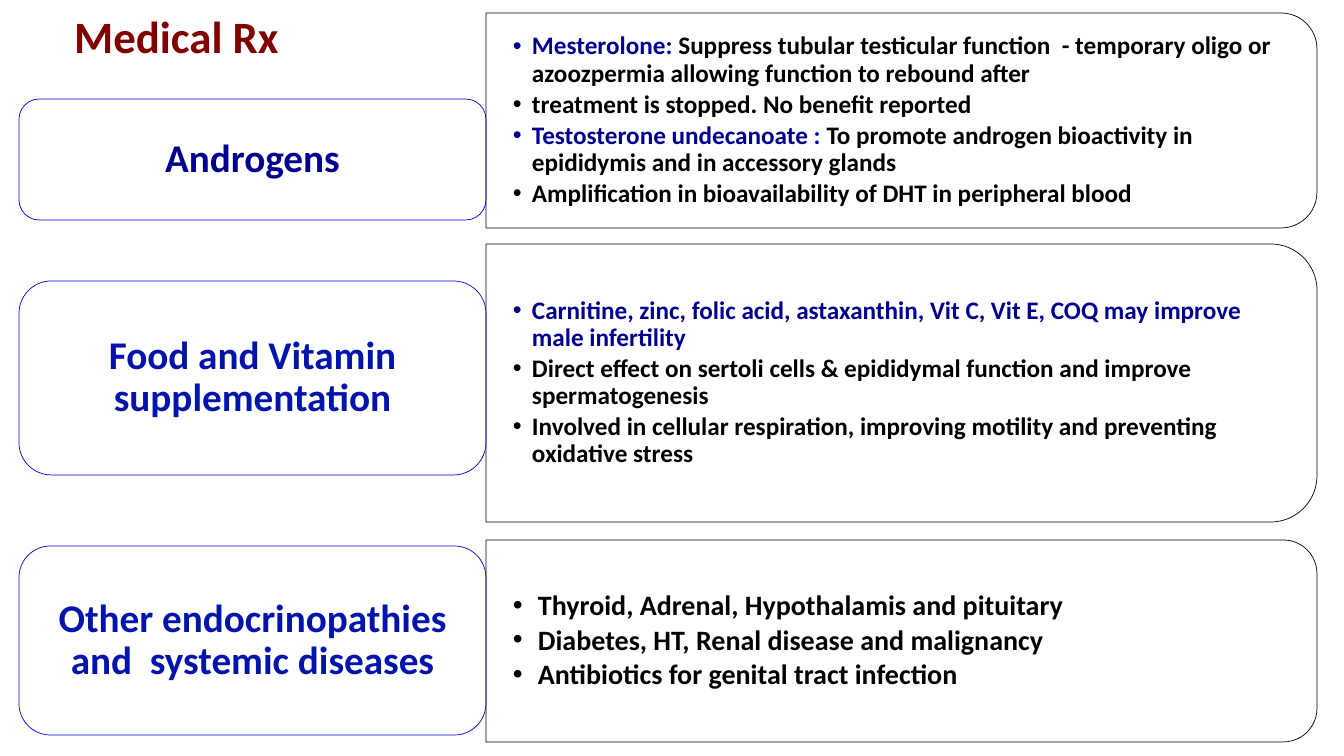
from lxml.etree import SubElement
from pptx import Presentation
from pptx.dml.color import RGBColor
from pptx.enum.shapes import MSO_SHAPE as Shape
from pptx.enum.text import MSO_ANCHOR as Anchor, PP_ALIGN as Align
from pptx.oxml.ns import qn
from pptx.util import Pt

EMU_PER_PX = 914400 / 100.8
NAVY, BLUE, BLACK, MAROON, OUTLINE = "000090", "0113AD", "000000", "800000", "0B00D4"
LABEL_LEFT, LABEL_WIDTH = 19, 467
PANEL_LEFT, PANEL_WIDTH = LABEL_LEFT + LABEL_WIDTH, 831

# label, colour, (top, height) of label, (top, height) of panel, size, indent, bullets
ROWS = [
    ("Androgens", NAVY, (99, 121), (13, 215), 18, 19, [
        [("Mesterolone: ", NAVY),
         ("Suppress tubular testicular function  - temporary oligo or azoozpermia "
          "allowing function to rebound after", BLACK)],
        [("treatment is stopped. No benefit reported", BLACK)],
        [("Testosterone undecanoate : ", NAVY),
         ("To promote androgen bioactivity in epididymis and in accessory glands", BLACK)],
        [("Amplification in bioavailability of DHT in peripheral blood", BLACK)],
    ]),
    ("Food and Vitamin supplementation", BLUE, (281, 194), (244, 278), 18, 19, [
        [("Carnitine, zinc, folic acid, astaxanthin, Vit C, Vit E, COQ may improve "
          "male infertility", NAVY)],
        [("Direct effect on sertoli cells & epididymal function and improve "
          "spermatogenesis", BLACK)],
        [("Involved in cellular respiration, improving motility and preventing "
          "oxidative stress", BLACK)],
    ]),
    ("Other endocrinopathies and  systemic diseases", BLUE, (546, 189), (540, 202), 20, 25, [
        [("Thyroid, Adrenal, Hypothalamis and pituitary", BLACK)],
        [("Diabetes, HT, Renal disease and malignancy", BLACK)],
        [("Antibiotics for genital tract infection", BLACK)],
    ]),
]


def px(length):
    return round(length * EMU_PER_PX)


def rgb(color):
    return RGBColor.from_string(color)


class SlideBuilder:
    font_name = "Calibri"

    def __init__(self, presentation):
        self.slide = presentation.slides.add_slide(presentation.slide_layouts[5])

    def style(self, font, size, color=None):
        font.name, font.size, font.bold = self.font_name, Pt(size), True
        if color:
            font.color.rgb = rgb(color)

    def frame(self, shape, anchor, horizontal, vertical):
        """Set wrapping, anchor and insets, and return the text frame."""
        frame = shape.text_frame
        frame.word_wrap, frame.vertical_anchor = True, anchor
        frame.margin_left = frame.margin_right = px(horizontal)
        frame.margin_top = frame.margin_bottom = px(vertical)
        return frame

    def title(self, text, left, top, width, height, size, color):
        title = self.slide.shapes.title
        title.left, title.top, title.width, title.height = map(px, (left, top, width, height))
        frame = self.frame(title, Anchor.TOP, 10, 5)
        frame.text = text
        paragraph = frame.paragraphs[0]
        paragraph.alignment = Align.CENTER
        self.style(paragraph.font, size, color)

    def outline(self, kind, left, top, width, height, color):
        shape = self.slide.shapes.add_shape(kind, *map(px, (left, top, width, height)))
        shape.shadow.inherit = False
        shape.fill.background()
        shape.line.color.rgb = rgb(color)
        shape.line.width = Pt(0.5)
        return shape

    def label(self, text, top, height, color):
        shape = self.outline(Shape.ROUNDED_RECTANGLE, LABEL_LEFT, top, LABEL_WIDTH, height, OUTLINE)
        frame = self.frame(shape, Anchor.MIDDLE, 12, 6)
        frame.text = text
        paragraph = frame.paragraphs[0]
        paragraph.alignment, paragraph.line_spacing = Align.CENTER, 0.9
        self.style(paragraph.font, 28, color)

    def panel(self, bullets, top, height, size, indent):
        """Draw a panel, turned so its round corners face right, with its bullets."""
        shift = (PANEL_WIDTH - height) / 2
        shape = self.outline(Shape.ROUND_2_SAME_RECTANGLE, PANEL_LEFT + shift, top - shift,
                             height, PANEL_WIDTH, BLACK)
        shape.rotation = 90
        corner = round(height * 0.05)
        box = self.slide.shapes.add_textbox(
            *map(px, (PANEL_LEFT, top + corner, PANEL_WIDTH - corner, height - 2 * corner)))
        frame = self.frame(box, Anchor.MIDDLE, 27, 14)
        for index, runs in enumerate(bullets):
            paragraph = frame.add_paragraph() if index else frame.paragraphs[0]
            self.bullet(paragraph, indent)
            paragraph.line_spacing, paragraph.space_after = 0.9, Pt(size * 0.15)
            self.style(paragraph.font, size, runs[0][1] if len(runs) == 1 else None)
            for text, color in runs:
                run = paragraph.add_run()
                run.text = text
                if len(runs) > 1:
                    run.font.color.rgb = rgb(color)

    def bullet(self, paragraph, indent):
        paragraph.level = 1
        properties = paragraph._p.get_or_add_pPr()
        properties.set("marL", str(px(indent)))
        properties.set("indent", str(-px(indent)))
        SubElement(properties, qn("a:buFont"), typeface="Arial")
        SubElement(properties, qn("a:buChar"), char="•")


def main():
    presentation = Presentation()
    presentation.slide_width, presentation.slide_height = px(1344), px(756)
    builder = SlideBuilder(presentation)
    builder.title("Medical Rx", -11, 4, 375, 95, 32, MAROON)
    for text, color, label_span, panel_span, size, indent, bullets in ROWS:
        builder.panel(bullets, *panel_span, size, indent)
        builder.label(text, *label_span, color)
    presentation.save("out.pptx")


if __name__ == "__main__":
    main()
